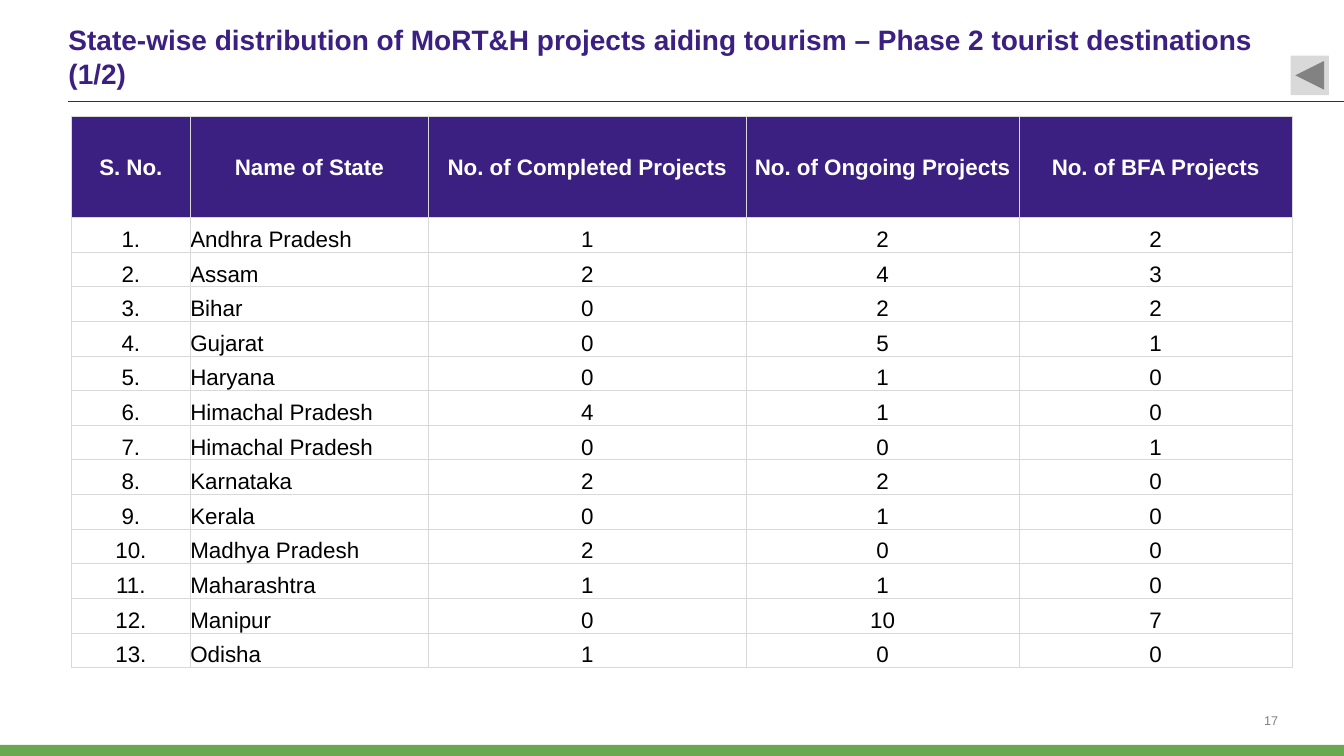
"""Build the slide listing MoRT&H tourism projects by state."""
import pptx
import pptx.util
import pptx.dml.color
import pptx.enum.shapes
import pptx.enum.text
import pptx.oxml
import pptx.oxml.ns
from dataclasses import dataclass

Pt = pptx.util.Pt
RGB = pptx.dml.color.RGBColor.from_string
SHAPE = pptx.enum.shapes.MSO_SHAPE
ALIGN = pptx.enum.text.PP_ALIGN
ANCHOR = pptx.enum.text.MSO_ANCHOR

TITLE = ("State-wise distribution of MoRT&H projects aiding tourism – "
         "Phase 2 tourist destinations (1/2)")
PAGE = "17"
HEADERS = ["S. No.", "Name of State", "No. of Completed Projects",
           "No. of Ongoing Projects", "No. of BFA Projects"]
STATES = [
    ("Andhra Pradesh", 1, 2, 2),
    ("Assam", 2, 4, 3),
    ("Bihar", 0, 2, 2),
    ("Gujarat", 0, 5, 1),
    ("Haryana", 0, 1, 0),
    ("Himachal Pradesh", 4, 1, 0),
    ("Himachal Pradesh", 0, 0, 1),
    ("Karnataka", 2, 2, 0),
    ("Kerala", 0, 1, 0),
    ("Madhya Pradesh", 2, 0, 0),
    ("Maharashtra", 1, 1, 0),
    ("Manipur", 0, 10, 7),
    ("Odisha", 1, 0, 0),
]
COL_WIDTHS = [85, 170, 227, 195, 195]
HEADER_HEIGHT, ROW_HEIGHT = 72.4, 24.72


@dataclass(frozen=True)
class Theme:
    font: str = "Arial"
    purple: str = "3B2082"
    green: str = "6AA84F"
    grid: str = "D9D9D9"
    muted: str = "808080"
    black: str = "000000"
    white: str = "FFFFFF"
    title: int = 20
    body: int = 16
    small: int = 9


THEME = Theme()


def write(tf, text, size=THEME.body, color=THEME.black, bold=False, align=ALIGN.LEFT):
    """Put one formatted paragraph into a text frame."""
    p = tf.paragraphs[0]
    p.alignment = align
    r = p.add_run()
    r.text = text
    r.font.name, r.font.size, r.font.bold = THEME.font, Pt(size), bold
    r.font.color.rgb = RGB(color)


def add_text(s, box, text, anchor, **style):
    """Add a wrapping text box without insets."""
    tf = s.shapes.add_textbox(*map(Pt, box)).text_frame
    tf.word_wrap = True
    tf.margin_left = tf.margin_right = tf.margin_top = tf.margin_bottom = 0
    tf.vertical_anchor = anchor
    write(tf, text, **style)


def add_block(s, kind, box, color):
    """Add a flat preset shape without outline."""
    sp = s.shapes.add_shape(kind, *map(Pt, box))
    sp.shadow.inherit = False
    sp.fill.solid()
    sp.fill.fore_color.rgb = RGB(color)
    sp.line.fill.background()
    return sp


def add_rule(s, x1, x2, y):
    """Add the horizontal line under the title."""
    line = s.shapes.add_connector(pptx.enum.shapes.MSO_CONNECTOR.STRAIGHT,
                                  Pt(x1), Pt(y), Pt(x2), Pt(y))
    line.line.color.rgb = RGB(THEME.purple)
    line.line.width = Pt(1)
    line._element.spPr.append(pptx.oxml.parse_xml(
        f'<a:effectLst {pptx.oxml.ns.nsdecls("a")}/>'))


def format_cell(cell, fill, anchor, inset):
    """Set the borders, fill and margins of a table cell."""
    tcPr = cell._tc.get_or_add_tcPr()
    for side in "LRTB":
        tcPr.append(pptx.oxml.parse_xml(
            f'<a:ln{side} {pptx.oxml.ns.nsdecls("a")} w="{Pt(0.5)}"><a:solidFill>'
            f'<a:srgbClr val="{THEME.grid}"/></a:solidFill></a:ln{side}>'))
    cell.fill.solid()
    cell.fill.fore_color.rgb = RGB(fill)
    cell.vertical_anchor = anchor
    cell.margin_left = cell.margin_right = cell.margin_top = Pt(inset)
    cell.margin_bottom = 0


def add_state_table(s, left, top):
    """Add the table of project counts, numbering the states."""
    rows = [HEADERS] + [(f"{n}.", *state) for n, state in enumerate(STATES, 1)]
    heights = [HEADER_HEIGHT] + [ROW_HEIGHT] * len(STATES)
    table = s.shapes.add_table(len(rows), len(HEADERS), Pt(left), Pt(top),
                               Pt(sum(COL_WIDTHS)), Pt(sum(heights))).table
    table.horz_banding = False
    for col, width in zip(table.columns, COL_WIDTHS):
        col.width = Pt(width)
    for i, (values, height) in enumerate(zip(rows, heights)):
        table.rows[i].height = Pt(height)
        head = i == 0
        for j, value in enumerate(values):
            cell = table.cell(i, j)
            format_cell(cell, THEME.purple if head else THEME.white,
                        ANCHOR.MIDDLE if head else ANCHOR.BOTTOM,
                        0.7 if head or j == 0 else 0)
            write(cell.text_frame, str(value), bold=head,
                  color=THEME.white if head else THEME.black,
                  align=ALIGN.LEFT if j == 1 and not head else ALIGN.CENTER)


def main():
    prs = pptx.Presentation()
    prs.slide_width, prs.slide_height = Pt(960), Pt(540)
    s = prs.slides.add_slide(prs.slide_layouts[6])
    add_rule(s, 48.7, 960, 72.4)
    add_text(s, (831, 506.2, 82, 13.7), PAGE, ANCHOR.BOTTOM,
             size=THEME.small, color=THEME.muted, align=ALIGN.RIGHT)
    add_block(s, SHAPE.RECTANGLE, (0, 532, 960, 8), THEME.green)
    add_text(s, (48.9, 9, 872.6, 62), TITLE, ANCHOR.MIDDLE,
             size=THEME.title, color=THEME.purple, bold=True)
    add_state_table(s, 51, 83)
    button = add_block(s, SHAPE.ACTION_BUTTON_FORWARD_OR_NEXT,
                       (921.8, 39.7, 27.4, 28.2), THEME.grid)
    button.rotation = 180
    prs.save("out.pptx")


if __name__ == "__main__":
    main()
